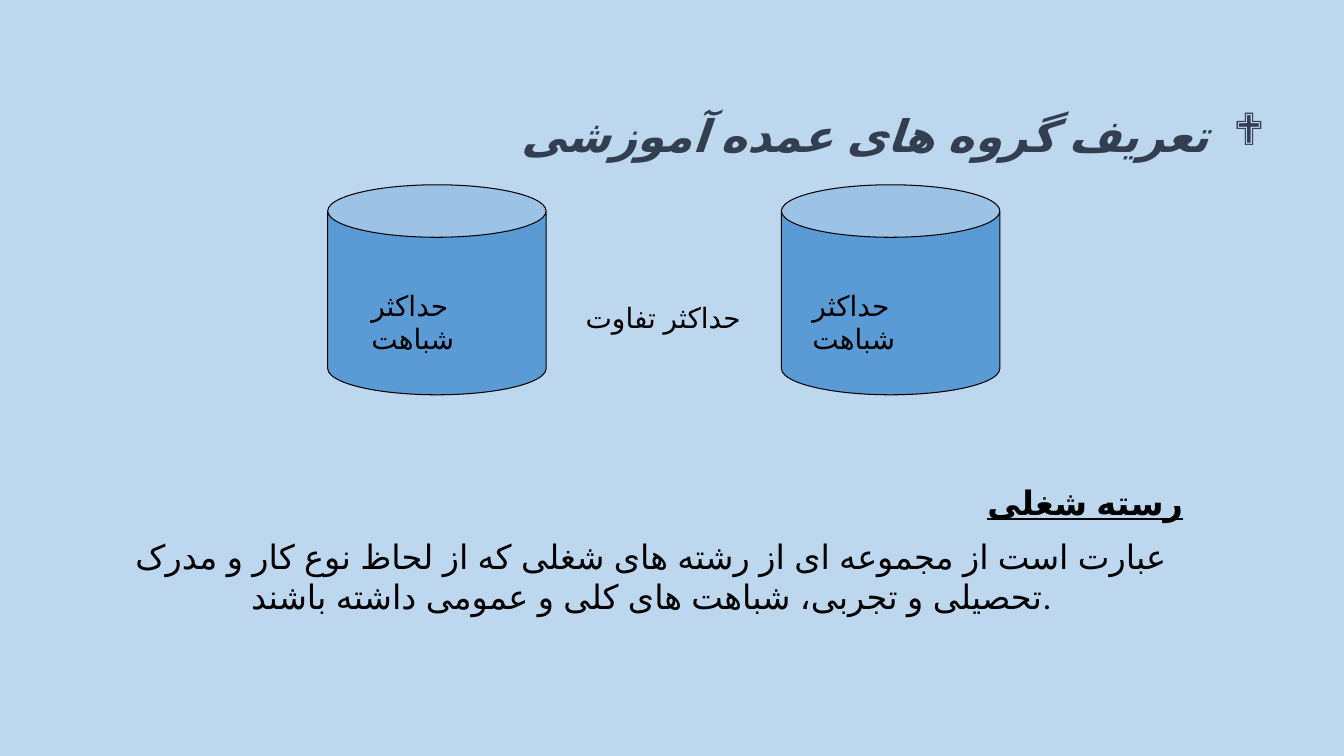
from lxml import etree
from pptx import Presentation
from pptx.dml.color import RGBColor
from pptx.enum.shapes import MSO_SHAPE as SHAPE
from pptx.enum.text import MSO_ANCHOR as ANCHOR, MSO_AUTO_SIZE as FIT, PP_ALIGN as ALIGN
from pptx.oxml.ns import qn
from pptx.util import Inches, Pt

COL = ROW = Inches(1 / 12)
BACK, CAN_FILL, TITLE_INK, INK = "BDD7EE", "5B9BD5", "333F50", "000000"
TITLE = dict(size=Pt(32), name="Calibri", bold=True, italic=True)
HEADING = dict(size=Pt(24), name="Calibri", bold=True, underline=True)
BODY = dict(size=Pt(24), name="Calibri", bold=False, underline=False)
LABEL = dict(size=Pt(20), name="Arial")


def paint(target, color):
    target.solid()
    target.fore_color.rgb = RGBColor.from_string(color)


def place(sp, col, row, cols, rows):
    sp.left, sp.top = int(col * COL), int(row * ROW)
    sp.width, sp.height = int(cols * COL), int(rows * ROW)


def frame(sp, fit=FIT.NONE):
    tf = sp.text_frame
    tf.word_wrap, tf.auto_size = True, fit
    tf.vertical_anchor = ANCHOR.TOP
    return tf


def write(p, text, style, color=INK, align=ALIGN.LEFT, spacing=1.0, after=0,
          rtl=False, bullet=None):
    p.alignment, p.line_spacing = align, spacing
    p.space_before, p.space_after = Pt(0), Pt(after)
    pPr = p._p.get_or_add_pPr()
    indent = Inches(0.56) if bullet else 0
    pPr.set("marL", str(indent))
    pPr.set("indent", str(-indent))
    pPr.set("rtl", str(int(rtl)))
    if bullet:
        etree.SubElement(pPr, qn("a:buFont"), typeface="Wingdings")
        etree.SubElement(pPr, qn("a:buChar"), char=bullet)
    else:
        etree.SubElement(pPr, qn("a:buNone"))
    r = p.add_run()
    r.text = text
    for key, value in style.items():
        setattr(r.font, key, value)
    r.font.color.rgb = RGBColor.from_string(color)
    rPr = r._r.get_or_add_rPr()
    rPr.set("lang", "fa-IR")
    etree.SubElement(rPr, qn("a:cs"), typeface="Arial")


def add_can(slide, col):
    sp = slide.shapes.add_shape(SHAPE.CAN, 0, 0, 0, 0)
    place(sp, col, 22, 26, 25)
    sp.adjustments[0] = 0.25
    sp.shadow.inherit = False
    paint(sp.fill, CAN_FILL)
    paint(sp.line.fill, INK)
    sp.line.width = Pt(0.75)


def add_label(slide, text, col, row):
    sp = slide.shapes.add_textbox(0, 0, 0, 0)
    place(sp, col, row, 21, 5.25)
    write(frame(sp, FIT.SHAPE_TO_FIT_TEXT).paragraphs[0], text, LABEL)


def main():
    prs = Presentation()
    prs.slide_width, prs.slide_height = Inches(13.33), Inches(7.5)
    slide = prs.slides.add_slide(prs.slide_layouts[1])
    paint(slide.background.fill, BACK)

    title, body = slide.placeholders
    place(title, 15, 9, 136.8, 13)
    write(frame(title).paragraphs[0], "تعریف گروه های عمده آموزشی", TITLE,
          TITLE_INK, ALIGN.RIGHT, 1.5, rtl=True, bullet="❖")

    place(body, 13, 56, 129, 18)
    tf = frame(body)
    write(tf.paragraphs[0], "رسته شغلی", HEADING, align=ALIGN.RIGHT,
          spacing=1.15, after=10, rtl=True)
    write(tf.add_paragraph(),
          "عبارت است از مجموعه ای از رشته های شغلی که از لحاظ نوع کار و مدرک "
          "تحصیلی و تجربی، شباهت های کلی و عمومی داشته باشند.",
          BODY, align=ALIGN.CENTER)

    for can_col, label_col in ((93, 95.5), (39, 43)):
        add_can(slide, can_col)
        add_label(slide, "حداکثر شباهت", label_col, 33.7)
    add_label(slide, "حداکثر تفاوت", 68.5, 35.2)

    prs.save("out.pptx")


if __name__ == "__main__":
    main()
